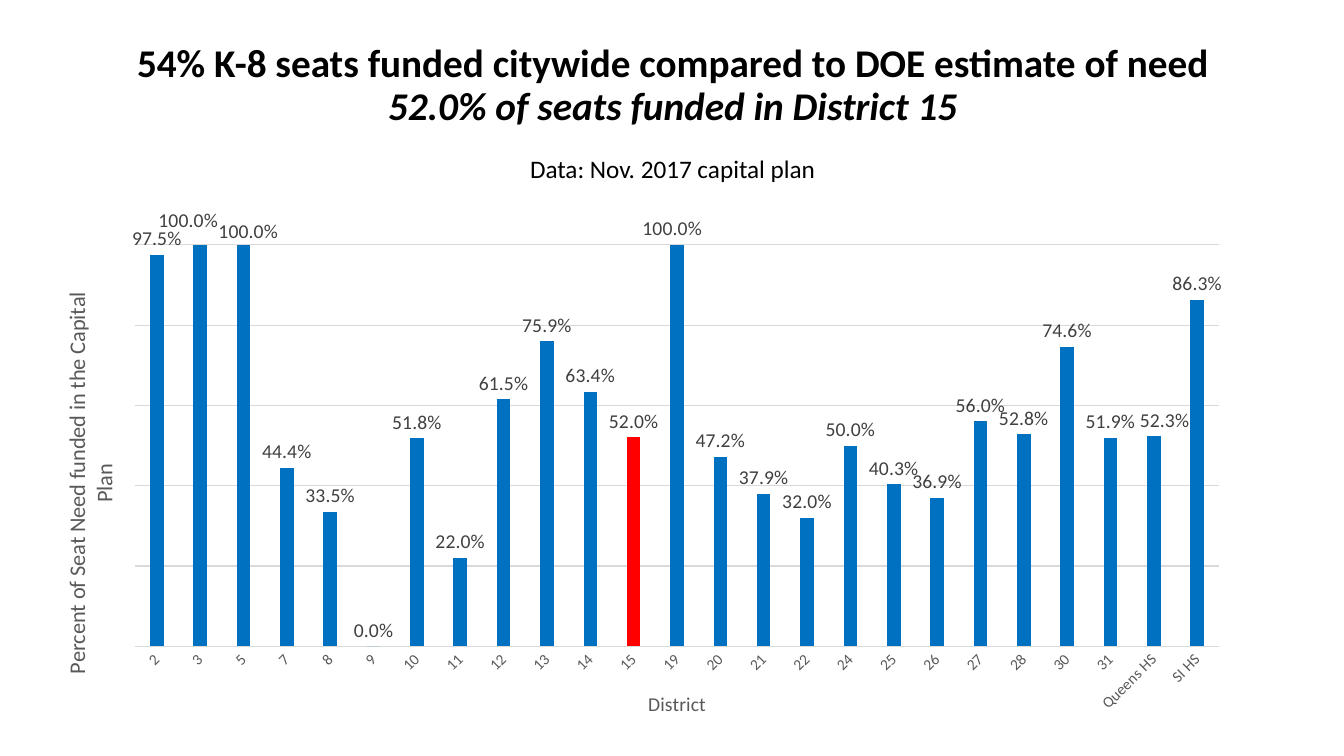
import pptx
import pptx.chart.data
import pptx.dml.color
import pptx.enum.chart
import pptx.enum.text
import pptx.oxml
import pptx.util
from pptx.oxml.ns import nsdecls, qn

SEAT_SHARES = {
    "2": 0.975, "3": 1, "5": 1, "7": 0.444, "8": 0.335, "9": 0,
    "10": 0.518, "11": 0.22, "12": 0.615, "13": 0.759, "14": 0.634,
    "15": 0.52, "19": 1, "20": 0.472, "21": 0.379, "22": 0.32,
    "24": 0.5, "25": 0.403, "26": 0.369, "27": 0.56, "28": 0.528,
    "30": 0.746, "31": 0.519, "Queens HS": 0.523, "SI HS": 0.863,
}
# District -> label shift, as shares of the chart's width and height
LABEL_SHIFTS = {"3": (-0.01, -0.015), "5": (0.004, 0.006),
                "19": (-0.004, 0), "Queens HS": (0.009, 0)}
PERCENT = "0.0%"


def color(hex_string):
    return pptx.dml.color.RGBColor.from_string(hex_string)


def layout_element(modes="", **values):
    """Return a manual chart layout; modes is extra XML put before the values."""
    parts = "".join(f'<c:{name} val="{value}"/>' for name, value in values.items())
    return pptx.oxml.parse_xml(
        f'<c:layout {nsdecls("c")}><c:manualLayout>{modes}{parts}'
        "</c:manualLayout></c:layout>")


class SlideBuilder:
    FONT = "Calibri"
    BLUE, RED, WHITE, BLACK = "0070C0", "FF0000", "FFFFFF", "000000"
    GRID, AXIS_TEXT, LABEL_TEXT = "D9D9D9", "595959", "404040"
    EDGE = '<c:xMode val="edge"/><c:yMode val="edge"/>'

    def __init__(self, presentation):
        self.width = presentation.slide_width
        self.height = presentation.slide_height
        self.slide = presentation.slides.add_slide(presentation.slide_layouts[5])

    def box(self, left, top, width, height):
        """Turn shares of the slide's size into lengths."""
        return (int(left * self.width), int(top * self.height),
                int(width * self.width), int(height * self.height))

    def style(self, font, size, hex_string, bold=False, italic=False):
        font.name, font.size = self.FONT, pptx.util.Pt(size)
        font.bold, font.italic = bold, italic
        font.color.rgb = color(hex_string)

    def title(self, lines, *shares):
        """Each line is text, size, bold, italic and points of space before."""
        shape = self.slide.shapes.title
        shape.left, shape.top, shape.width, shape.height = self.box(*shares)
        shape.fill.solid()
        shape.fill.fore_color.rgb = color(self.WHITE)
        frame = shape.text_frame
        frame.word_wrap = True
        frame.auto_size = pptx.enum.text.MSO_AUTO_SIZE.NONE
        frame.vertical_anchor = pptx.enum.text.MSO_ANCHOR.MIDDLE
        frame.text = "\n".join(line[0] for line in lines)
        for paragraph, (_, size, bold, italic, gap) in zip(frame.paragraphs, lines):
            paragraph.alignment = pptx.enum.text.PP_ALIGN.CENTER
            paragraph.line_spacing = 0.9
            paragraph.space_before = pptx.util.Pt(gap)
            self.style(paragraph.font, size, self.BLACK, bold, italic)

    def column_chart(self, values, highlight, shifts, *shares):
        data = pptx.chart.data.CategoryChartData(number_format=PERCENT)
        data.categories = list(values)
        data.add_series("Series 1", list(values.values()))
        chart = self.slide.shapes.add_chart(
            pptx.enum.chart.XL_CHART_TYPE.COLUMN_CLUSTERED,
            *self.box(*shares), data).chart
        chart.has_legend = chart.has_title = False
        self.style(chart.font, 10, self.BLACK)
        plot = chart.plots[0]
        plot.gap_width, plot.overlap, plot.vary_by_categories = 219, -27, False
        series = plot.series[0]
        names = list(values)
        for format_, fill in ((series.format, self.BLUE),
                              (series.points[names.index(highlight)].format, self.RED)):
            format_.fill.solid()
            format_.fill.fore_color.rgb = color(fill)
        self.data_labels(series, names, shifts)
        self.axes(chart)
        plot_area = chart._chartSpace.find(".//" + qn("c:plotArea"))
        for old_layout in plot_area.findall(qn("c:layout")):
            plot_area.remove(old_layout)
        plot_area.insert(0, layout_element(
            '<c:layoutTarget val="inner"/>' + self.EDGE,
            x=0.081, y=0.098, w=0.906, h=0.758))

    def data_labels(self, series, names, shifts):
        outside = pptx.enum.chart.XL_LABEL_POSITION.OUTSIDE_END
        labels = series.data_labels
        labels.show_value = True
        labels.number_format, labels.number_format_is_linked = PERCENT, False
        labels.position = outside
        self.style(labels.font, 14, self.LABEL_TEXT)
        for name, (x, y) in shifts.items():
            label = series.points[names.index(name)].data_label
            self.style(label.font, 14, self.LABEL_TEXT)
            label.position = outside
        for label in series._element.iter(qn("c:dLbl")):
            x, y = shifts[names[int(label.find(qn("c:idx")).get("val"))]]
            label.insert(1, layout_element(x=x, y=y))
            label.insert(2, pptx.oxml.parse_xml(
                f'<c:numFmt {nsdecls("c")} formatCode="{PERCENT}" sourceLinked="0"/>'))

    def axis_title(self, axis, text, size):
        frame = axis.axis_title.text_frame
        frame.text = text
        self.style(frame.paragraphs[0].font, size, self.AXIS_TEXT)
        return axis.axis_title

    def axes(self, chart):
        no_tick = pptx.enum.chart.XL_TICK_MARK.NONE
        districts, shares = chart.category_axis, chart.value_axis
        districts.major_tick_mark = districts.minor_tick_mark = no_tick
        self.style(districts.tick_labels.font, 11, self.AXIS_TEXT)
        body = districts._element.find(qn("c:txPr")).find(qn("a:bodyPr"))
        body.set("rot", "-2700000")
        body.set("vert", "horz")
        self.axis_title(districts, "District", 14)

        shares.minimum_scale, shares.maximum_scale, shares.major_unit = 0, 1, 0.2
        shares.has_major_gridlines = True
        shares.tick_labels.number_format = PERCENT
        shares.tick_labels.number_format_is_linked = False
        shares.visible = False
        title = self.axis_title(
            shares, "Percent of Seat Need funded in the Capital Plan", 16)
        body = title._element.find(".//" + qn("a:bodyPr"))
        body.set("rot", "-5400000")
        body.set("vert", "horz")
        for old_layout in title._element.findall(qn("c:layout")):
            title._element.remove(old_layout)
        title._element.find(qn("c:tx")).addnext(
            layout_element(self.EDGE, x=0.016, y=0.18))
        for line in (districts.format.line, shares.major_gridlines.format.line):
            line.color.rgb = color(self.GRID)
            line.width = pptx.util.Pt(0.75)


def main():
    presentation = pptx.Presentation()
    presentation.slide_width = pptx.util.Inches(13.33)
    presentation.slide_height = pptx.util.Inches(7.5)
    builder = SlideBuilder(presentation)
    builder.title([
        ("54% K-8 seats funded citywide compared to DOE estimate of need",
         28, True, False, 0),
        ("52.0% of seats funded in District 15", 28, True, True, 0),
        ("Data: Nov. 2017 capital plan", 18, False, False, 20),
    ], 0.069, 0.051, 0.863, 0.199)
    builder.column_chart(SEAT_SHARES, "15", LABEL_SHIFTS,
                         0.0285, 0.255, 0.89, 0.701)
    presentation.save("out.pptx")


if __name__ == "__main__":
    main()
